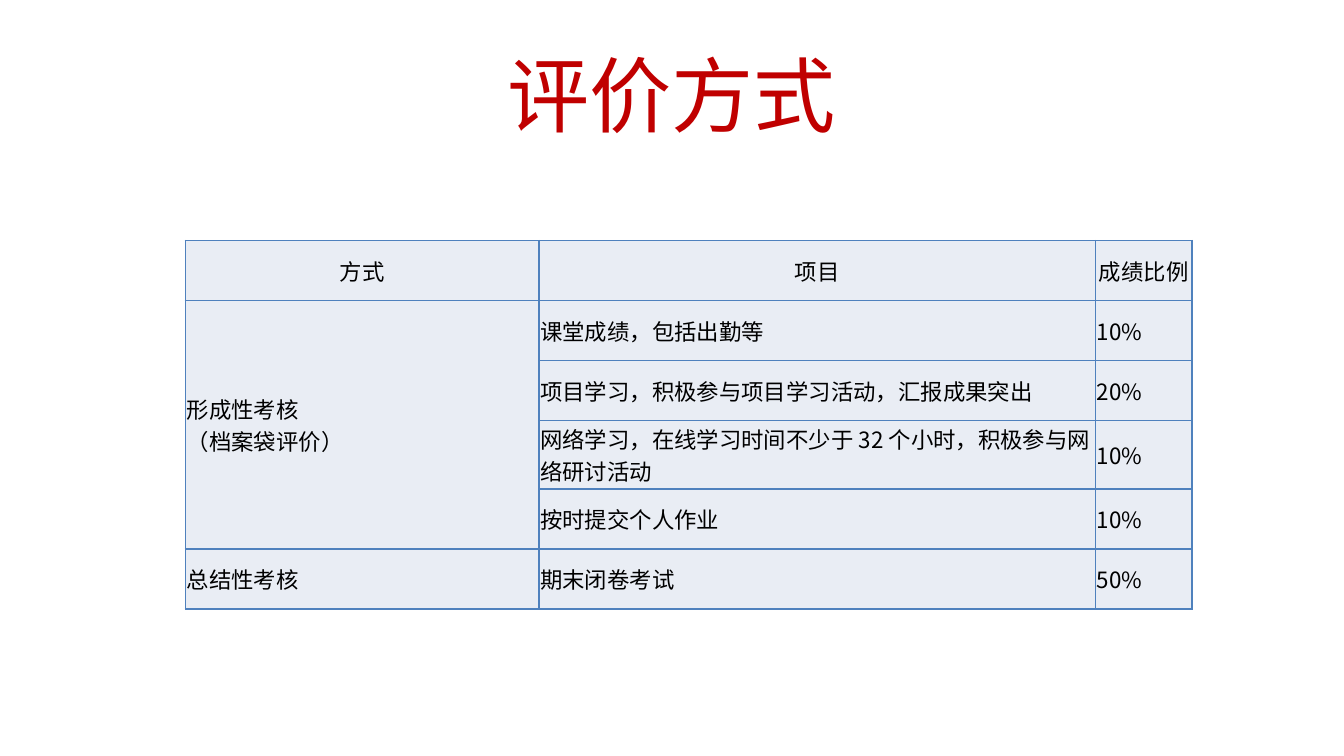
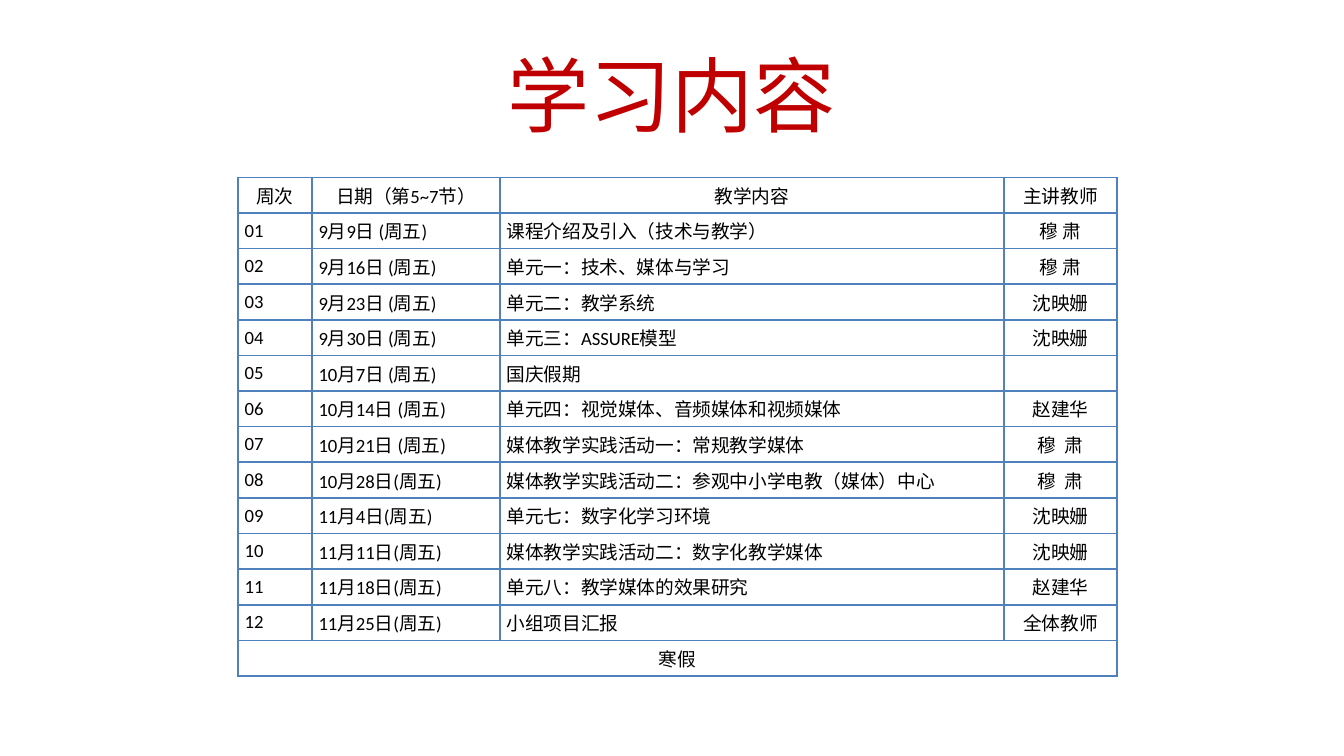
from lxml.etree import SubElement
from pptx import Presentation
from pptx.dml.color import RGBColor
from pptx.enum.text import MSO_ANCHOR, PP_ALIGN
from pptx.oxml.ns import qn
from pptx.util import Inches, Pt

RED = RGBColor(0xC0, 0x00, 0x00)
BLACK = RGBColor(0x00, 0x00, 0x00)
BORDER = RGBColor(0x4F, 0x81, 0xBD)
PALE = RGBColor(0xE9, 0xED, 0xF4)

CJK = "Noto Sans CJK SC"
LATIN = "Calibri"
LEFT, CENTER, JUSTIFY = PP_ALIGN.LEFT, PP_ALIGN.CENTER, PP_ALIGN.JUSTIFY

GRADING = [
    ("方式", "项目", "成绩比例"),
    ("形成性考核\n（档案袋评价）", "课堂成绩，包括出勤等", "10%"),
    ("", "项目学习，积极参与项目学习活动，汇报成果突出", "20%"),
    ("", "网络学习，在线学习时间不少于 32 个小时，积极参与网络研讨活动", "10%"),
    ("", "按时提交个人作业", "10%"),
    ("总结性考核", "期末闭卷考试", "50%"),
]

LESSONS = [
    ("9月9日 (周五)", "课程介绍及引入（技术与教学）", "穆 肃"),
    ("9月16日 (周五)", "单元一：技术、媒体与学习", "穆 肃"),
    ("9月23日 (周五)", "单元二：教学系统", "沈映姗"),
    ("9月30日 (周五)", "单元三：ASSURE模型", "沈映姗"),
    ("10月7日 (周五)", "国庆假期", ""),
    ("10月14日 (周五)", "单元四：视觉媒体、音频媒体和视频媒体", "赵建华"),
    ("10月21日 (周五)", "媒体教学实践活动一：常规教学媒体", "穆  肃"),
    ("10月28日(周五)", "媒体教学实践活动二：参观中小学电教（媒体）中心", "穆  肃"),
    ("11月4日(周五)", "单元七：数字化学习环境", "沈映姗"),
    ("11月11日(周五)", "媒体教学实践活动二：数字化教学媒体", "沈映姗"),
    ("11月18日(周五)", "单元八：教学媒体的效果研究", "赵建华"),
    ("11月25日(周五)", "小组项目汇报", "全体教师"),
]
SCHEDULE = [
    ("周次", "日期（第5~7节）", "教学内容", "主讲教师"),
    *((f"{week:02}", *lesson) for week, lesson in enumerate(LESSONS, 1)),
    ("寒假", "", "", ""),
]


def write(tf, text, *, size, font=CJK, color=BLACK, align=LEFT):
    """Fill a text frame, one paragraph per line of text."""
    for i, line in enumerate(text.split("\n")):
        p = tf.paragraphs[0] if i == 0 else tf.add_paragraph()
        p.alignment = align
        if not line:
            # The end mark keeps an empty cell from growing to 18 pt.
            SubElement(p._p, qn("a:endParaRPr"), sz=str(size * 100))
            continue
        r = p.add_run()
        r.text = line
        r.font.size = Pt(size)
        r.font.name = font
        r.font.color.rgb = color
        SubElement(r._r.get_or_add_rPr(), qn("a:ea"), typeface=CJK)


def draw_borders(cell):
    tc_pr = cell._tc.get_or_add_tcPr()
    for side in ("lnL", "lnR", "lnT", "lnB"):
        ln = SubElement(tc_pr, qn(f"a:{side}"), w=str(Pt(1)))
        fill = SubElement(ln, qn("a:solidFill"))
        SubElement(fill, qn("a:srgbClr"), val=str(BORDER))


class Deck:
    def __init__(self):
        self.prs = Presentation()
        self.prs.slide_width = Inches(10)
        self.prs.slide_height = Inches(10) * 9 // 16
        self.slide = None

    def add_slide(self, title):
        self.slide = self.prs.slides.add_slide(self.prs.slide_layouts[6])
        box = self.slide.shapes.add_textbox(
            Inches(0.5), Inches(0.23), Inches(9), Inches(0.94))
        tf = box.text_frame
        tf.word_wrap = True
        tf.vertical_anchor = MSO_ANCHOR.MIDDLE
        write(tf, title, size=44, color=RED, align=CENTER)

    def add_table(self, rows, left, top, height, widths, *, merge, aligns,
                  margins, size, font=CJK, fill=None, centered=(0,),
                  tall_rows=()):
        """Add a bordered table.

        merge is a pair of (row, column) corners; tall_rows holds
        (row, height) pairs for rows that need more than an equal share.
        """
        table = self.slide.shapes.add_table(
            len(rows), len(widths), Inches(left), Inches(top),
            Inches(sum(widths)), Inches(height)).table
        table.first_row = table.horz_banding = False
        for column, width in zip(table.columns, widths):
            column.width = Inches(width)
        for i, row_height in tall_rows:
            table.rows[i].height = Inches(row_height)
        first, last = merge
        table.cell(*first).merge(table.cell(*last))

        side, edge = (Inches(m) for m in margins)
        for i, row in enumerate(rows):
            for j, text in enumerate(row):
                cell = table.cell(i, j)
                cell.vertical_anchor = MSO_ANCHOR.MIDDLE
                cell.margin_left = cell.margin_right = side
                cell.margin_top = cell.margin_bottom = edge
                draw_borders(cell)
                if fill is None:
                    cell.fill.background()
                else:
                    cell.fill.solid()
                    cell.fill.fore_color.rgb = fill
                write(cell.text_frame, text, size=size, font=font,
                      align=CENTER if i in centered else aligns[j])


def main():
    deck = Deck()

    deck.add_slide("评价方式")
    deck.add_table(GRADING, 1.38, 1.79, 2.68, (2.63, 4.14, 0.72),
                   merge=((1, 0), (4, 0)), aligns=(LEFT,) * 3,
                   margins=(0.01, 0.01), size=12, fill=PALE,
                   tall_rows=((3, 0.51),))

    deck.add_slide("学习内容")
    holiday = len(SCHEDULE) - 1
    deck.add_table(SCHEDULE, 1.77, 1.32, 3.71, (0.55, 1.4, 3.75, 0.84),
                   merge=((holiday, 0), (holiday, 3)),
                   aligns=(JUSTIFY, JUSTIFY, JUSTIFY, CENTER),
                   margins=(0.05, 0), size=10, font=LATIN,
                   centered=(0, holiday))

    deck.prs.save("out.pptx")


if __name__ == "__main__":
    main()
